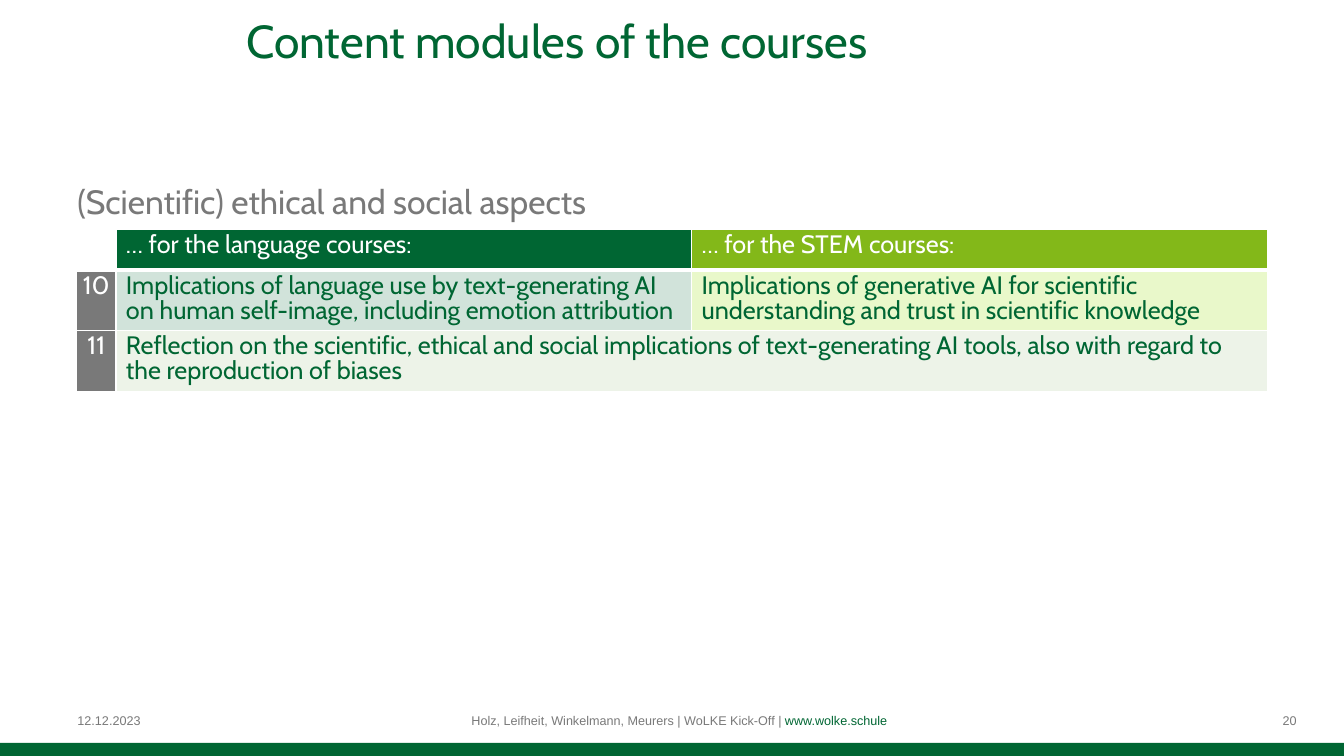
from dataclasses import dataclass

from lxml.etree import SubElement
from pptx import Presentation
from pptx.dml.color import RGBColor
from pptx.enum.shapes import MSO_SHAPE
from pptx.enum.text import MSO_ANCHOR, PP_ALIGN
from pptx.oxml.ns import qn
from pptx.util import Inches, Pt


@dataclass(frozen=True)
class Theme:
    green: str = "006633"
    lime: str = "83B819"
    grey: str = "797979"
    white: str = "FFFFFF"
    pale_green: str = "D1E3DA"
    pale_lime: str = "E9F8CA"
    pale_shared: str = "EDF3E8"
    heading_font: str = "Cabin"
    footer_font: str = "Arial"
    title_size: int = 33
    body_size: int = 24
    table_size: int = 18
    footer_size: int = 9


THEME = Theme()
MARGINS = (0.1, 0.05, 0.1, 0.05)


def add_run(p, text, font, size, color):
    r = p.add_run()
    r.text = text
    r.font.name = font
    r.font.size = Pt(size)
    r.font.color.rgb = RGBColor.from_string(color)


def set_margins(target, margins):
    sides = ("left", "top", "right", "bottom")
    for side, value in zip(sides, margins):
        setattr(target, f"margin_{side}", Inches(value))


def add_text(s, box, runs, font, size, align=PP_ALIGN.LEFT,
             anchor=MSO_ANCHOR.TOP, margins=MARGINS):
    tf = s.shapes.add_textbox(*map(Inches, box)).text_frame
    tf.word_wrap = True
    tf.vertical_anchor = anchor
    set_margins(tf, margins)
    p = tf.paragraphs[0]
    p.alignment = align
    for text, color in runs:
        add_run(p, text, font, size, color)


def add_footer(s, left, width, runs, align, margins=MARGINS):
    add_text(s, (left, 6.95, width, 0.4), runs, THEME.footer_font,
             THEME.footer_size, align, MSO_ANCHOR.MIDDLE, margins)


def add_bar(s, box, color):
    sp = s.shapes.add_shape(MSO_SHAPE.RECTANGLE, *map(Inches, box))
    sp.shadow.inherit = False
    sp.fill.solid()
    sp.fill.fore_color.rgb = RGBColor.from_string(color)
    sp.line.fill.background()


def set_borders(cell, widths):
    tc_pr = cell._tc.get_or_add_tcPr()
    for side, width in widths.items():
        ln = SubElement(tc_pr, qn(f"a:ln{side}"), w=str(Pt(width)))
        fill = SubElement(ln, qn("a:solidFill"))
        SubElement(fill, qn("a:srgbClr"), val=THEME.white)


def fill_cell(cell, text, fill, color, is_number):
    cell.fill.solid()
    cell.fill.fore_color.rgb = RGBColor.from_string(fill)
    if is_number:
        set_margins(cell, (0.05,) * 4)
    p = cell.text_frame.paragraphs[0]
    p.alignment = PP_ALIGN.CENTER if is_number else PP_ALIGN.LEFT
    p.line_spacing = Pt(18)
    add_run(p, text, THEME.heading_font, THEME.table_size, color)


def add_modules_table(s, left, top, col_widths, row_heights, rows):
    box = (left, top, sum(col_widths), sum(row_heights))
    table = s.shapes.add_table(len(rows), len(col_widths),
                               *map(Inches, box)).table
    table.first_row = table.horz_banding = False
    for column, width in zip(table.columns, col_widths):
        column.width = Inches(width)
    for row, height in zip(table.rows, row_heights):
        row.height = Inches(height)

    for i, row in enumerate(rows):
        # A row with fewer entries lets its last one span the rest
        if len(row) < len(col_widths):
            table.cell(i, len(row) - 1).merge(
                table.cell(i, len(col_widths) - 1))
        for j in range(len(col_widths)):
            cell = table.cell(i, j)
            set_borders(cell, {"L": 1, "R": 1, "T": 3 if i == 1 else 1,
                               "B": 3 if i == 0 else 1})
            if j < len(row) and row[j]:
                fill_cell(cell, *row[j], is_number=j == 0)
            else:
                cell.fill.background()


def main():
    t = THEME
    prs = Presentation()
    prs.slide_width, prs.slide_height = Inches(13.33), Inches(7.5)
    s = prs.slides.add_slide(prs.slide_layouts[6])

    # Footer and bottom bar
    add_footer(s, 4.56, 4.39,
               [("Holz, Leifheit, Winkelmann, Meurers | WoLKE Kick-Off | ", t.grey),
                ("www.wolke.schule ", t.green)],
               PP_ALIGN.CENTER, (0.07, 0.04, 0.07, 0.04))
    add_bar(s, (0, 7.37, 13.33, 0.13), t.green)

    # Title and subheading
    add_text(s, (0.67, 0.12, 9.71, 1.25),
             [("Content modules of the courses", t.green)],
             t.heading_font, t.title_size, PP_ALIGN.CENTER,
             margins=(0.1, 0, 0.1, 0.05))
    add_text(s, (0.67, 1.75, 12, 0.5),
             [("(Scientific) ethical and social aspects", t.grey)],
             t.heading_font, t.body_size)

    # Modules: (text, fill, text colour) per cell
    rows = [
        [None,
         ("… for the language courses:", t.green, t.white),
         ("… for the STEM courses:", t.lime, t.white)],
        [("10", t.grey, t.white),
         ("Implications of language use by text-generating AI on human "
          "self-image, including emotion attribution", t.pale_green, t.green),
         ("Implications of generative AI for scientific understanding and "
          "trust in scientific knowledge", t.pale_lime, t.green)],
        [("11", t.grey, t.white),
         ("Reflection on the scientific, ethical and social implications of "
          "text-generating AI tools, also with regard to the reproduction of "
          "biases", t.pale_shared, t.green)],
    ]
    add_modules_table(s, 0.76, 2.28, (0.39, 5.71, 5.71), (0.4, 0.6, 0.6), rows)

    # Date and slide number
    add_footer(s, 0.67, 3.11, [("12.12.2023", t.grey)], PP_ALIGN.LEFT)
    add_footer(s, 9.75, 3.11, [("20", t.grey)], PP_ALIGN.RIGHT,
               (0.1, 0.05, 0, 0.05))

    prs.save("out.pptx")


if __name__ == "__main__":
    main()
